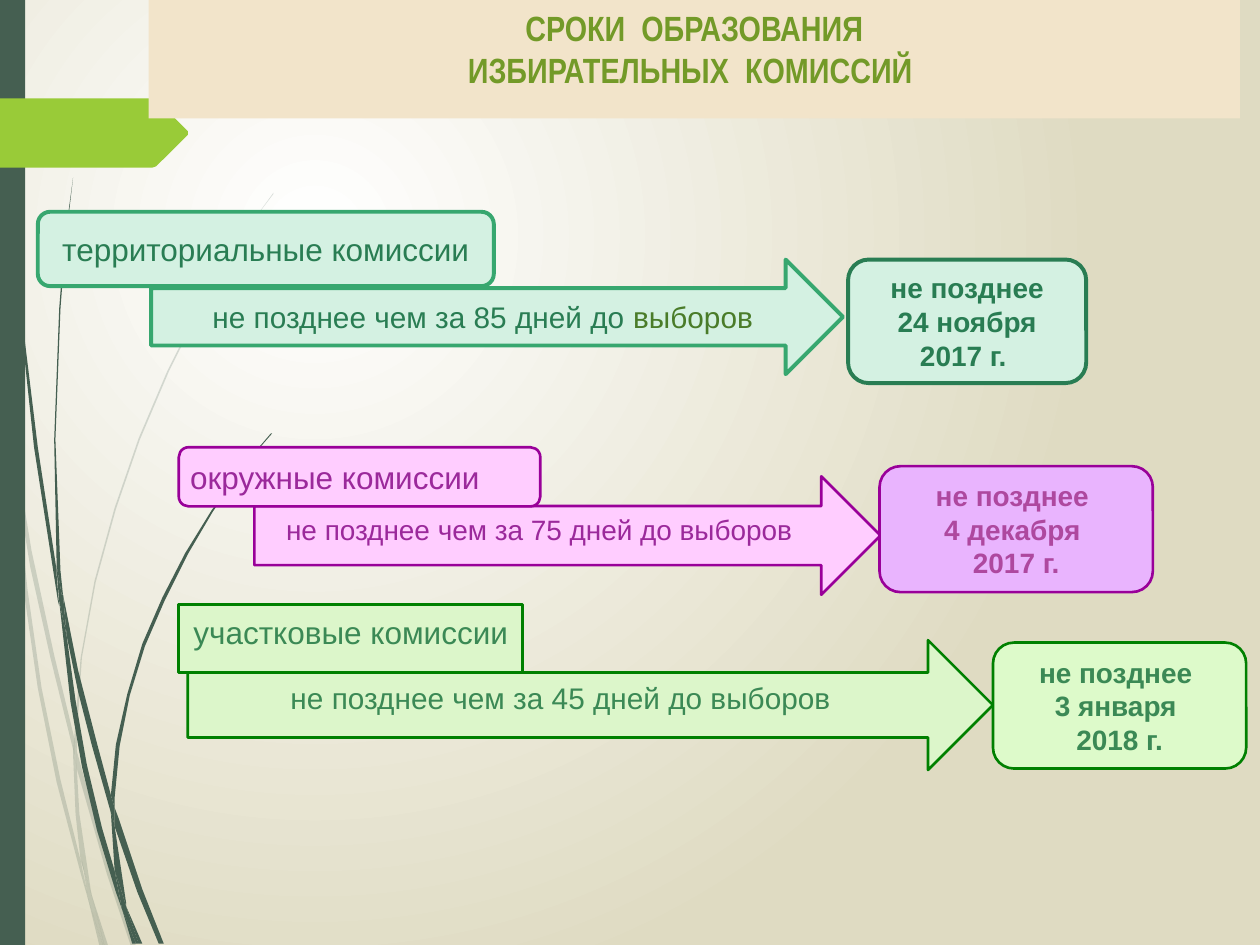
from lxml import etree
from pptx import Presentation
from pptx.dml.color import RGBColor
from pptx.enum import shapes, text
from pptx.oxml.ns import qn
from pptx.util import Pt

COLORS = {
    "white": "FFFFFF", "sand": "DFDBC2", "pine": "455F51", "lime": "99CB38",
    "cream": "F2E4CA", "olive": "739A28", "pink": "FFCDFF", "purple": "990099",
    "plum": "9B299B", "lilac": "E9B4FE", "mauve": "AE489F", "pale": "DCF6CA",
    "pale_date": "DDFACA", "green": "008000", "fern": "3B8955", "mint": "D4F1E2",
    "jade": "37A76F", "forest": "297D53", "moss": "4A7C29",
}
KINDS = {
    "box": shapes.MSO_SHAPE.RECTANGLE,
    "round": shapes.MSO_SHAPE.ROUNDED_RECTANGLE,
    "arrow": shapes.MSO_SHAPE.RIGHT_ARROW,
}
LEFT, CENTER = text.PP_ALIGN.LEFT, text.PP_ALIGN.CENTER
TOP, MIDDLE = text.MSO_ANCHOR.TOP, text.MSO_ANCHOR.MIDDLE

# Outlines lie on a grid of 1000 by 750 steps
GRID_STEP = Pt(0.72)
PALE_STEMS = [
    [(8, 350), (6, 322), (0, 282), (0, 299), (7, 344)],
    [(40, 522), (59, 599), (59, 586), (43, 520), (25, 437), (10, 345), (12, 376), (24, 450)],
    [(64, 607), (61, 596), (61, 610), (85, 694), (104, 751), (108, 751), (88, 692)],
    [(83, 751), (86, 751), (73, 711)],
    [(64, 683), (48, 619), (33, 546), (22, 469), (12, 376), (8, 350), (12, 410), (19, 470),
     (30, 546), (45, 621), (64, 693), (70, 714), (69, 707)],
    [(58, 599), (60, 646), (64, 683), (67, 692), (73, 711), (72, 706), (63, 646), (61, 610),
     (61, 608)],
    [(61, 584), (65, 522), (76, 462), (92, 404), (111, 349), (134, 295), (159, 245), (187, 198),
     (201, 175), (217, 154), (217, 153), (201, 175), (186, 197), (158, 244), (133, 294),
     (110, 348), (91, 403), (75, 461), (64, 522), (59, 584), (59, 586), (61, 596)],
    [(70, 714), (79, 751), (82, 751)],
    [(61, 608), (61, 610), (61, 596), (59, 586), (58, 599)],
    [(67, 692), (65, 683), (69, 707), (70, 714), (82, 751), (83, 751), (73, 711)],
]
DARK_STEMS = [
    [(5, 110), (14, 233), (27, 355), (46, 477), (47, 481), (45, 457), (45, 453), (30, 355),
     (15, 232), (6, 109), (4, 48), (3, 0), (2, 0), (3, 48)],
    [(73, 592), (88, 645), (88, 633), (88, 631), (77, 590), (62, 532), (50, 472), (53, 505),
     (62, 549)],
    [(94, 649), (91, 641), (91, 656), (109, 708), (126, 749), (130, 749), (113, 706)],
    [(91, 691), (81, 657), (69, 607), (60, 556), (53, 505), (47, 477), (56, 557), (65, 608),
     (77, 659), (92, 708), (97, 722), (96, 717)],
    [(50, 472), (48, 453), (44, 349), (48, 245), (52, 193), (58, 141), (51, 193), (47, 245),
     (43, 349), (45, 449), (49, 472)],
    [(110, 749), (113, 749), (100, 719)],
    [(47, 477), (53, 505), (50, 472), (49, 472), (45, 449), (45, 453)],
    [(91, 633), (95, 592), (103, 552), (115, 513), (131, 476), (149, 440), (169, 406),
     (191, 374), (203, 359), (216, 344), (215, 344), (203, 358), (191, 373), (168, 405),
     (147, 439), (129, 474), (113, 511), (101, 551), (92, 591), (88, 631), (91, 641)],
    [(97, 722), (105, 749), (108, 749)],
    [(88, 645), (91, 691), (96, 706), (100, 719), (100, 716), (91, 656), (90, 651)],
    [(88, 645), (90, 651), (91, 656), (91, 641), (88, 631), (88, 633)],
    [(96, 706), (91, 691), (96, 717), (97, 722), (108, 749), (110, 749), (100, 719)],
]
PAGE_TAB = [(149, 107), (124, 132), (121, 133), (0, 133), (0, 78), (121, 78), (124, 79), (149, 104)]

DEADLINE = dict(insets=(5, 5, 20, 10), para={"line_spacing": 0.9, "space_after": Pt(6)})
BODY = dict(insets=(5, 5, 5, 5), anchor=TOP, para={"space_after": Pt(12)})

# kind, (left, top, width, height), fill, (line colour, line width), text
PARTS = [
    ("box", (85, 0, 623.5, 67.7), "cream", None,
     dict(lines=["СРОКИ  ОБРАЗОВАНИЯ\vИЗБИРАТЕЛЬНЫХ  КОМИССИЙ "], size=20, color="olive",
          bold=True, font="Arial Narrow", anchor=TOP)),
    ("arrow", (145.4, 272.2, 357.8, 67.7), "pink", ("purple", 1.5), None),
    ("text", (145.4, 289.4, 340.6, 33.8), None, None,
     dict(DEADLINE, lines=["не позднее чем за 75 дней до выборов"], size=16, color="plum")),
    ("round", (102.2, 255.6, 206.6, 33.8), "pink", ("purple", 1.5), None),
    ("text", (103.7, 257, 203.8, 30.2), None, None,
     dict(BODY, lines=["окружные комиссии"], size=18, color="plum", align=LEFT)),
    ("arrow", (107.3, 365.8, 460.1, 74.2), "pale", ("green", 1.5), None),
    ("text", (107.3, 383.8, 441.4, 36.7), None, None,
     dict(DEADLINE, lines=["не позднее чем за 45 дней до выборов"], size=17, color="fern")),
    ("box", (102.2, 345.6, 196.6, 38.9), "pale", ("green", 1.5), None),
    ("text", (102.2, 345.6, 196.6, 38.9), None, None,
     dict(BODY, lines=["участковые комиссии"], size=18, color="fern")),
    ("round", (502.6, 266.4, 156.2, 72), "lilac", ("purple", 1.5),
     dict(lines=["не позднее ", "4 декабря ", "2017 г."], size=16, color="mauve", bold=True)),
    ("round", (567.4, 367.2, 144.7, 72), "pale_date", ("green", 1.5),
     dict(lines=["не позднее ", "3 января ", "2018 г."], size=16, color="fern", bold=True)),
    ("round", (21.6, 121, 260.6, 42.5), "mint", ("jade", 2.25),
     dict(lines=["территориальные комиссии"], size=18, color="forest")),
    ("arrow", (86.4, 148.3, 395.3, 65.5), "mint", ("jade", 2.25),
     dict(lines=["не позднее чем за 85 дней до "], size=17, color="forest",
          ending=("выборов", "moss"))),
    ("round", (484.6, 148.3, 136.1, 70.6), "mint", ("forest", 2.25),
     dict(lines=["не позднее", "24 ноября 2017 г. "], size=16, color="forest", bold=True)),
]


def rgb(name):
    return RGBColor.from_string(COLORS[name])


def paint(shape, fill, line=None, opacity=None):
    shape.shadow.inherit = False
    shape.fill.solid()
    shape.fill.fore_color.rgb = rgb(fill)
    if opacity:
        tint = shape.element.spPr.find(qn("a:solidFill"))[0]
        etree.SubElement(tint, qn("a:alpha"), val=str(opacity * 1000))
    if line:
        shape.line.color.rgb = rgb(line[0])
        shape.line.width = Pt(line[1])
    else:
        shape.line.fill.background()


def draw_outline(slide, points, fill, opacity=None):
    builder = slide.shapes.build_freeform(*points[0], scale=GRID_STEP)
    builder.add_line_segments(points[1:], close=True)
    paint(builder.convert_to_shape(), fill, opacity=opacity)


def write(shape, lines, size, color, bold=False, font="Arial", align=CENTER, anchor=MIDDLE,
          insets=(7.2, 3.6, 7.2, 3.6), para=None, ending=None):
    """Fill the frame with one paragraph a line; ending is a last run in its own colour."""
    frame = shape.text_frame
    frame.word_wrap = True
    frame.vertical_anchor = anchor
    for side, inset in zip(("left", "top", "right", "bottom"), insets):
        setattr(frame, f"margin_{side}", Pt(inset))
    for i, line in enumerate(lines):
        paragraph = frame.add_paragraph() if i else frame.paragraphs[0]
        paragraph.text = line
        if ending:
            paragraph.add_run().text = ending[0]
        for name, value in {"alignment": align, **(para or {})}.items():
            setattr(paragraph, name, value)
        for run in paragraph.runs:
            for name, value in {"name": font, "size": Pt(size), "bold": bold}.items():
                setattr(run.font, name, value)
            run.font.color.rgb = rgb(color)
        if ending:
            paragraph.runs[-1].font.color.rgb = rgb(ending[1])


def set_background(slide):
    fill = slide.background.fill
    fill.gradient()
    for stop, name in zip(fill.gradient_stops, ("white", "sand")):
        stop.color.rgb = rgb(name)
    gradient = slide.element.xpath(".//a:gradFill")[0]
    gradient.remove(gradient.find(qn("a:lin")))
    glow = etree.SubElement(gradient, qn("a:path"), path="circle")
    etree.SubElement(glow, qn("a:fillToRect"), l="50000", t="50000", r="100000", b="100000")


def main():
    deck = Presentation()
    deck.slide_width, deck.slide_height = Pt(720), Pt(540)
    slide = deck.slides.add_slide(deck.slide_layouts[6])
    set_background(slide)
    for stem in PALE_STEMS:
        draw_outline(slide, stem, "pine", opacity=20)
    for stem in DARK_STEMS:
        draw_outline(slide, stem, "pine")
    sidebar = slide.shapes.add_shape(KINDS["box"], 0, 0, Pt(14.4), Pt(540))
    paint(sidebar, "pine")
    draw_outline(slide, PAGE_TAB, "lime")
    for kind, box, fill, line, wording in PARTS:
        place = [Pt(length) for length in box]
        if kind == "text":
            part = slide.shapes.add_textbox(*place)
        else:
            part = slide.shapes.add_shape(KINDS[kind], *place)
            paint(part, fill, line)
        if wording:
            write(part, **wording)
    deck.save("out.pptx")


if __name__ == "__main__":
    main()
